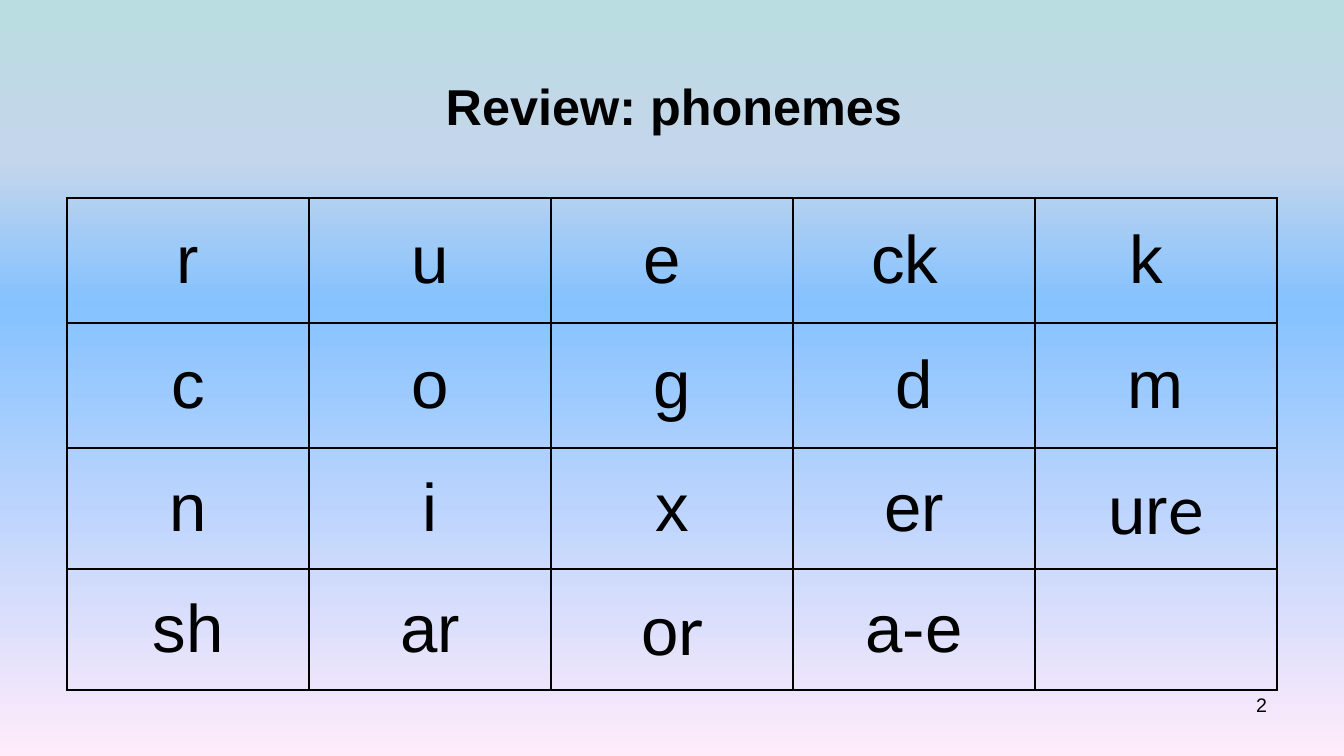
from lxml.etree import SubElement
from pptx import Presentation
from pptx.dml.color import RGBColor
from pptx.enum.text import MSO_ANCHOR, PP_ALIGN
from pptx.oxml.ns import qn
from pptx.util import Pt

# Content: a pair holds the Arial part and the Lato part of a cell
TITLE = "Review: phonemes"
PAGE = "2"
SOUNDS = [
    ["r", "u", "e ", "ck ", "k "],
    ["c", "o", "g", "d", "m"],
    ["n", "i", "x", "er", ("ur", "e")],
    ["sh", "ar", ("o", "r"), "a-e", ""],
]
COLORS = {"ink": "000000", "mint": "BADDE1", "mist": "C4D6EB",
          "sky": "85C2FF", "pink": "FFEBFA"}
STOPS = [(0, "mint"), (21, "mist"), (40, "sky"), (100, "pink")]
FONTS = ("Arial", "Lato")

# Layout in px
WIDTH, HEIGHT = 1344, 756
LEFT, TOP, COL = 67, 198, 242
ROWS = [125, 125, 121, 121]
TITLE_BOX = (87, 70, 1174, 72)
PAGE_BOX = (964, 688, 313, 52)


def px(n):
    return round(n * 914400 / 100.8)


def style(font, size, bold=False):
    font.name = FONTS[0]
    font.size = Pt(size)
    font.bold = bold
    font.color.rgb = RGBColor.from_string(COLORS["ink"])


def label(slide, box, text, size, align, bold=False):
    frame = slide.shapes.add_textbox(*map(px, box)).text_frame
    frame.word_wrap = True
    para = frame.paragraphs[0]
    para.text = text
    para.alignment = align
    style(para.font, size, bold)


def paint(slide):
    fill = slide.background.fill
    fill.gradient()
    fill.gradient_angle = 270
    stops = next(slide.element.iter(qn("a:gsLst")))
    for old in list(stops):
        stops.remove(old)
    for pos, name in STOPS:
        stop = SubElement(stops, qn("a:gs"), pos=str(pos * 1000))
        SubElement(stop, qn("a:srgbClr"), val=COLORS[name])


def border(cell):
    props = cell._tc.get_or_add_tcPr()
    for i, side in enumerate(("lnL", "lnR", "lnT", "lnB")):
        line = props.makeelement(qn("a:" + side), {"w": str(Pt(1))})
        solid = SubElement(line, qn("a:solidFill"))
        SubElement(solid, qn("a:srgbClr"), val=COLORS["ink"])
        props.insert(i, line)


def write(cell, text):
    cell.fill.background()
    border(cell)
    cell.vertical_anchor = MSO_ANCHOR.MIDDLE
    cell.margin_left = cell.margin_right = px(13)
    cell.margin_top = cell.margin_bottom = px(5)
    para = cell.text_frame.paragraphs[0]
    para.alignment = PP_ALIGN.CENTER
    style(para.font, 48)
    parts = text if isinstance(text, tuple) else (text,)
    for part, font in zip(parts, FONTS):
        if part:
            run = para.add_run()
            run.text = part
            if len(parts) > 1:
                run.font.name = font


def grid(slide):
    cols = len(SOUNDS[0])
    table = slide.shapes.add_table(
        len(ROWS), cols, px(LEFT), px(TOP), px(cols * COL), px(sum(ROWS))).table
    table.first_row = table.horz_banding = False
    for col in table.columns:
        col.width = px(COL)
    for r, (high, row) in enumerate(zip(ROWS, SOUNDS)):
        table.rows[r].height = px(high)
        for c, text in enumerate(row):
            write(table.cell(r, c), text)


def main():
    deck = Presentation()
    deck.slide_width, deck.slide_height = px(WIDTH), px(HEIGHT)
    slide = deck.slides.add_slide(deck.slide_layouts[6])
    paint(slide)
    grid(slide)
    label(slide, PAGE_BOX, PAGE, 14, PP_ALIGN.RIGHT)
    label(slide, TITLE_BOX, TITLE, 36, PP_ALIGN.CENTER, True)
    deck.save("out.pptx")


if __name__ == "__main__":
    main()
